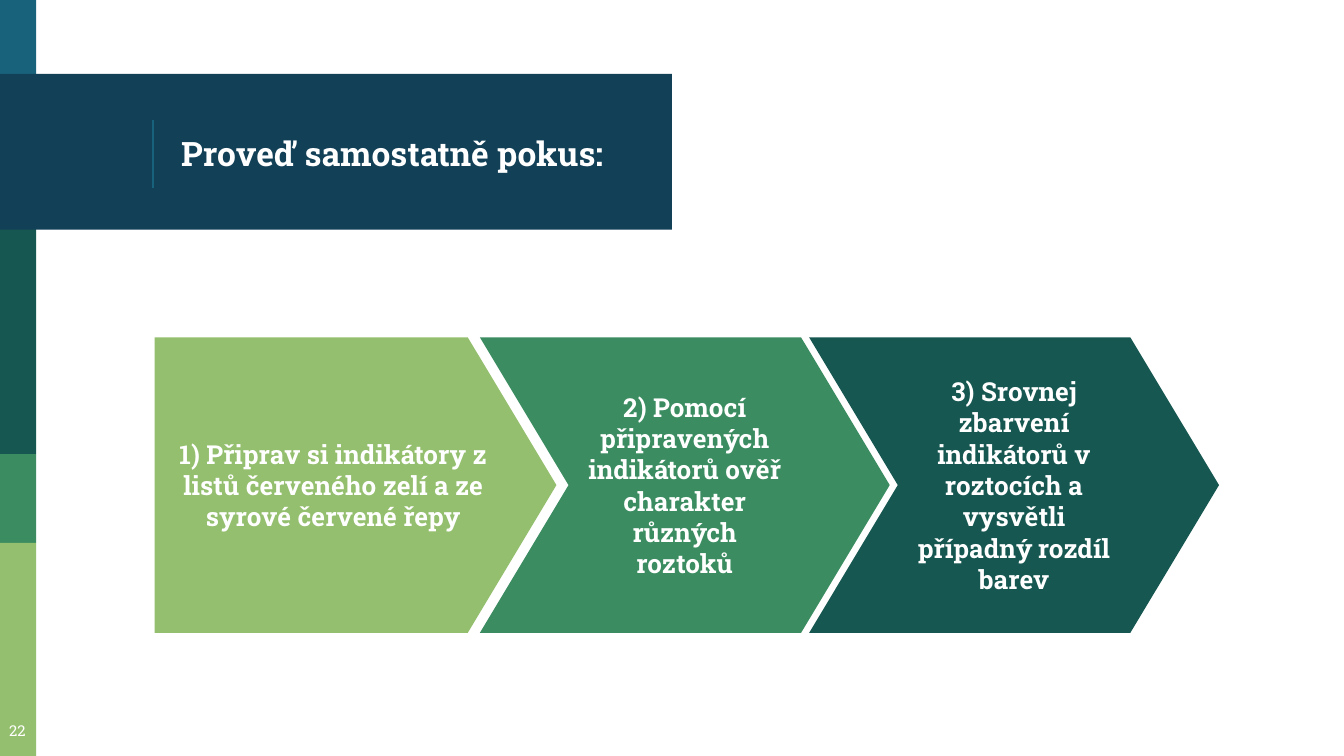
import pptx
import pptx.util
import pptx.dml.color
import pptx.enum.shapes
import pptx.enum.text
import pptx.oxml.ns
from dataclasses import dataclass
from lxml import etree

Inches = pptx.util.Inches
Pt = pptx.util.Pt
Shape = pptx.enum.shapes.MSO_SHAPE
Align = pptx.enum.text.PP_ALIGN
Anchor = pptx.enum.text.MSO_ANCHOR


@dataclass(frozen=True)
class Theme:
    font: str = "Roboto Slab"
    white: str = "FFFFFF"
    navy: str = "124057"
    blue: str = "18637B"
    teal: str = "165751"
    green: str = "3B8D61"
    lime: str = "94BF6E"
    title: int = 18
    body: int = 14
    small: int = 8


theme = Theme()


def color(code):
    return pptx.dml.color.RGBColor.from_string(code)


def add_block(slide, kind, box, fill):
    shape = slide.shapes.add_shape(kind, *map(Inches, box))
    shape.shadow.inherit = False
    shape.fill.solid()
    shape.fill.fore_color.rgb = color(fill)
    shape.line.fill.background()
    return shape


def write(shape, text, size, bold=True, align=Align.CENTER, anchor=Anchor.MIDDLE):
    frame = shape.text_frame
    frame.word_wrap = True
    frame.vertical_anchor = anchor
    frame.margin_left = frame.margin_right = Inches(0.1)
    frame.margin_top = frame.margin_bottom = Inches(0.1)
    para = frame.paragraphs[0]
    para.alignment = align
    run = para.add_run()
    run.text = text
    run.font.name = theme.font
    run.font.size = Pt(size)
    run.font.bold = bold
    run.font.color.rgb = color(theme.white)


def add_text(slide, box, text, size, **style):
    write(slide.shapes.add_textbox(*map(Inches, box)), text, size, **style)


def add_rule(slide, left, top, bottom):
    """Draw the thin upright line beside the title."""
    line = slide.shapes.add_connector(
        pptx.enum.shapes.MSO_CONNECTOR.STRAIGHT,
        Inches(left), Inches(top), Inches(left), Inches(bottom))
    line.line.color.rgb = color(theme.blue)
    line.line.width = Pt(0.75)
    props = line.element.spPr
    etree.SubElement(props, pptx.oxml.ns.qn("a:effectLst"))


def add_side(slide):
    """Stack the coloured bands down the left edge."""
    bands = [(0, 0.58, theme.blue), (1.7, 1.68, theme.teal),
             (3.38, 0.66, theme.green), (4.04, 1.59, theme.lime)]
    for top, height, fill in bands:
        add_block(slide, Shape.RECTANGLE, (0, top, 0.27, height), fill)


def add_steps(slide):
    steps = [
        (Shape.PENTAGON, 1.15, 2.99, theme.lime,
         "1) Připrav si indikátory z listů červeného zelí a ze syrové červené řepy"),
        (Shape.CHEVRON, 3.57, 3.05, theme.green,
         "2) Pomocí připravených indikátorů ověř charakter různých roztoků"),
        (Shape.CHEVRON, 6.02, 3.05, theme.teal,
         "3) Srovnej zbarvení indikátorů v roztocích a vysvětli případný rozdíl barev"),
    ]
    for kind, left, width, fill, text in steps:
        step = add_block(slide, kind, (left, 2.51, width, 2.2), fill)
        step.adjustments[0] = 0.3
        write(step, text, theme.body)


def main():
    deck = pptx.Presentation()
    deck.slide_width = Inches(10)
    deck.slide_height = deck.slide_width * 9 // 16
    slide = deck.slides.add_slide(deck.slide_layouts[6])

    add_side(slide)
    add_block(slide, Shape.RECTANGLE, (0, 0.55, 5, 1.16), theme.navy)
    add_rule(slide, 1.14, 0.89, 1.4)
    add_text(slide, (1.25, 0.58, 3.51, 1.12), "Proveď samostatně pokus:",
             theme.title, align=Align.LEFT)
    add_steps(slide)
    add_text(slide, (-0.06, 5.3, 0.38, 0.35), "22", theme.small,
             bold=False, anchor=Anchor.TOP)

    deck.save("out.pptx")


if __name__ == "__main__":
    main()
